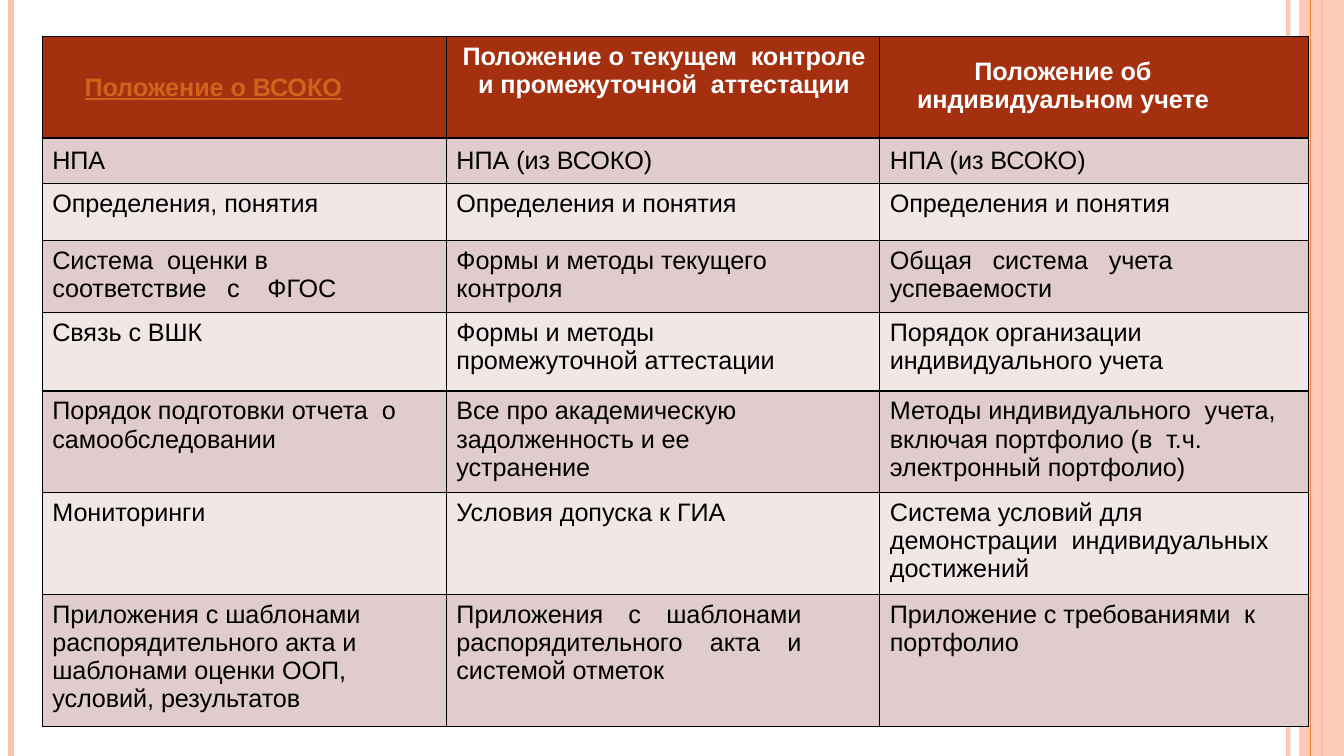
from lxml import etree
from pptx import Presentation
from pptx.dml.color import RGBColor
from pptx.enum.shapes import MSO_CONNECTOR, MSO_SHAPE
from pptx.enum.text import PP_ALIGN
from pptx.oxml.ns import qn
from pptx.util import Pt

STRAIGHT = MSO_CONNECTOR.STRAIGHT
RECTANGLE = MSO_SHAPE.RECTANGLE
LEFT, CENTER, JUSTIFY = PP_ALIGN.LEFT, PP_ALIGN.CENTER, PP_ALIGN.JUSTIFY

COLORS = {
    "peach": "FEC3AE", "orange": "FE8637", "header": "A53010", "link": "D2611C",
    "white": "FFFFFF", "black": "000000", "odd": "E0CCCC", "even": "F0E7E6",
}
SLIDE_WIDTH, SLIDE_HEIGHT = 960, 540
COLUMN_WIDTHS = [288.7, 309.6, 306]
ROW_HEIGHTS = [72.7, 32.4, 41, 51.1, 56.2, 72.7, 72.7, 94.3]
RIGHT_MARGINS = [30, 56, 9]

HEADINGS = [
    {"text": "Положение о ВСОКО", "top": 26.5, "left": 30.2, "color": "link", "underline": True},
    {"text": "Положение о текущем  контроле и промежуточной  аттестации",
     "top": 4.3, "left": 10, "right": 9, "align": CENTER},
    {"text": "Положение об индивидуальном учете", "top": 15.1, "left": 26.6, "indent": 41},
]
PROVISIONS = [
    ["НПА", "НПА (из ВСОКО)", "НПА (из ВСОКО)"],
    ["Определения, понятия", "Определения и понятия", "Определения и понятия"],
    ["Система  оценки в соответствие   с    ФГОС",
     "Формы и методы текущего контроля",
     "Общая   система   учета успеваемости"],
    ["Связь с ВШК",
     "Формы и методы промежуточной аттестации",
     "Порядок организации индивидуального учета"],
    ["Порядок подготовки отчета  о самообследовании",
     "Все про академическую задолженность и ее устранение",
     "Методы индивидуального  учета, включая портфолио (в  т.ч. электронный портфолио)"],
    ["Мониторинги",
     "Условия допуска к ГИА",
     "Система условий для демонстрации  индивидуальных достижений"],
    ["Приложения с шаблонами распорядительного акта и шаблонами оценки ООП, условий, результатов",
     "Приложения с шаблонами распорядительного акта и системой отметок",
     "Приложение с требованиями  к портфолио"],
]


def rgb(name):
    """Return the named colour."""
    return RGBColor.from_string(COLORS[name])


def set_opacity(part, percent):
    """Make the solid colour inside a shape or line partly transparent."""
    color = next(part._element.spPr.iter(qn("a:srgbClr")))
    etree.SubElement(color, qn("a:alpha")).set("val", str(percent * 1000))


def add_stripe(slide, x, top, height, color, weight):
    """Draw one vertical stripe line."""
    stripe = slide.shapes.add_connector(STRAIGHT, Pt(x), Pt(top), Pt(x), Pt(top + height))
    stripe.line.color.rgb = rgb(color)
    stripe.line.width = Pt(weight)
    etree.SubElement(stripe._element.spPr, qn("a:effectLst"))
    return stripe


def add_side_bands(slide, left, top, width, height):
    """Draw the stripes along both edges of the given box."""
    right = left + width
    set_opacity(add_stripe(slide, right - 39.8, top, height, "peach", 3), 93)
    add_stripe(slide, left + 8, top, height, "peach", 4.5)
    add_stripe(slide, right - 16, top, height, "orange", 1.5)
    band = slide.shapes.add_shape(RECTANGLE, Pt(right - 32), Pt(top), Pt(32), Pt(height))
    band.shadow.inherit = False
    band.fill.solid()
    band.fill.fore_color.rgb = rgb("peach")
    band.line.fill.background()
    set_opacity(band, 87)
    add_stripe(slide, right - 24, top, height, "orange", 0.75)


def add_borders(cell):
    """Give a cell thin black borders on all four sides."""
    properties = cell._tc.get_or_add_tcPr()
    for position, side in enumerate(("lnL", "lnR", "lnT", "lnB")):
        border = etree.Element(qn(f"a:{side}"), w=str(Pt(1)))
        fill = etree.SubElement(border, qn("a:solidFill"))
        etree.SubElement(fill, qn("a:srgbClr")).set("val", COLORS["black"])
        properties.insert(position, border)


def fill_cell(cell, text, fill, top=4.3, left=7.2, right=0, color="black",
              bold=False, underline=False, align=LEFT, indent=0):
    """Write formatted text into a bordered, filled cell."""
    cell.fill.solid()
    cell.fill.fore_color.rgb = rgb(fill)
    add_borders(cell)
    cell.margin_left, cell.margin_top = Pt(left), Pt(top)
    cell.margin_right, cell.margin_bottom = Pt(right), 0
    paragraph = cell.text_frame.paragraphs[0]
    paragraph.alignment = align
    paragraph._p.get_or_add_pPr().set("indent", str(Pt(indent)))
    run = paragraph.add_run()
    run.text = text
    run.font.name, run.font.size = "Arial", Pt(18)
    run.font.bold, run.font.underline = bold, underline
    run.font.color.rgb = rgb(color)
    run._r.get_or_add_rPr().set("spc", "-5")


def add_provisions_table(slide, left, top, width, height):
    """Build the comparison table of the three provisions in the given box."""
    table = slide.shapes.add_table(len(ROW_HEIGHTS), len(COLUMN_WIDTHS),
                                   Pt(left), Pt(top), Pt(width), Pt(height)).table
    table.horz_banding = False
    for column, share in zip(table.columns, COLUMN_WIDTHS):
        column.width = Pt(width * share / sum(COLUMN_WIDTHS))
    for row, share in zip(table.rows, ROW_HEIGHTS):
        row.height = Pt(height * share / sum(ROW_HEIGHTS))
    for column, heading in enumerate(HEADINGS):
        fill_cell(table.cell(0, column), **{"fill": "header", "color": "white", "bold": True, **heading})
    last = len(PROVISIONS)
    for row, provisions in enumerate(PROVISIONS, 1):
        for column, provision in enumerate(provisions):
            fill_cell(table.cell(row, column), provision, "odd" if row % 2 else "even",
                      top=6.5 if row == 1 else 4.3, right=RIGHT_MARGINS[column],
                      align=JUSTIFY if (row, column) == (last, 1) else LEFT)


def main():
    """Create the slide and save it."""
    deck = Presentation()
    deck.slide_width, deck.slide_height = Pt(SLIDE_WIDTH), Pt(SLIDE_HEIGHT)
    slide = deck.slides.add_slide(deck.slide_layouts[6])
    add_side_bands(slide, 0, 0, SLIDE_WIDTH, SLIDE_HEIGHT)
    add_provisions_table(slide, 30.2, 25.9, sum(COLUMN_WIDTHS), sum(ROW_HEIGHTS))
    deck.save("out.pptx")


if __name__ == "__main__":
    main()
